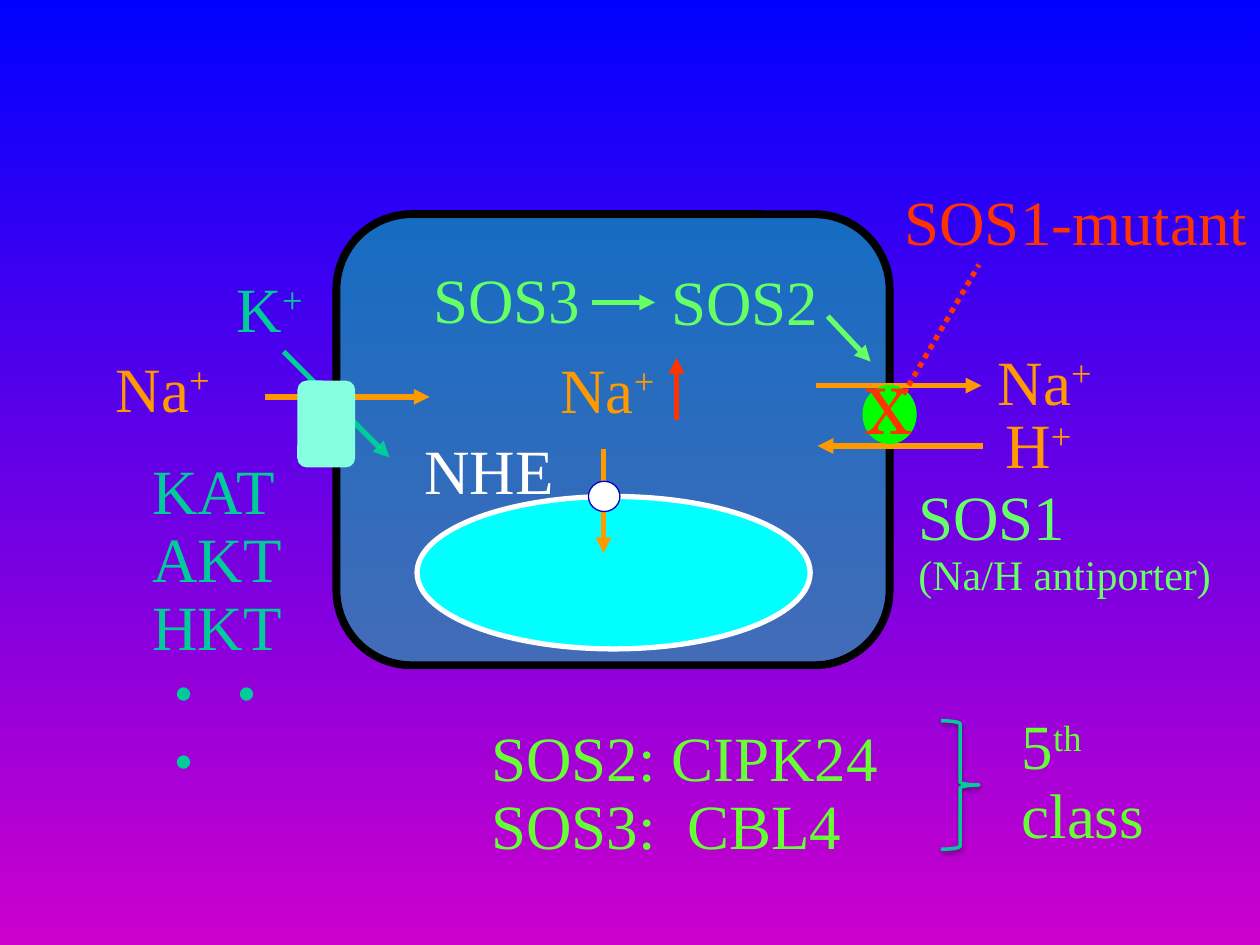
from dataclasses import dataclass
from typing import Optional

from lxml import etree
from pptx import Presentation
from pptx import util as u
from pptx.dml.color import RGBColor
from pptx.enum import dml, shapes, text
from pptx.oxml.ns import qn


@dataclass(frozen=True)
class Theme:
    sky: str = "0000FF"
    dusk: str = "CC00CC"
    teal: str = "00CC99"
    mint: str = "85FFE0"
    orange: str = "FF9900"
    green: str = "66FF66"
    lime: str = "66FF33"
    pump: str = "00FF00"
    red: str = "FF3300"
    cyan: str = "00FFFF"
    white: str = "FFFFFF"
    navy: str = "0000CC"
    black: str = "000000"
    serif: str = "Times New Roman"
    schola: str = "TeX Gyre Schola"
    large: int = 36
    small: int = 24
    stroke: float = 3


THEME = Theme()
SHAPE = shapes.MSO_SHAPE


@dataclass(frozen=True)
class Label:
    """Lines of text; what follows ^ in a line is superscript."""
    box: tuple
    lines: tuple
    color: str
    sizes: tuple = ()
    font: str = THEME.serif
    wrap: bool = False


@dataclass(frozen=True)
class Stroke:
    start: tuple
    end: tuple
    color: str
    dotted: bool = False


@dataclass(frozen=True)
class Body:
    kind: SHAPE
    box: tuple
    fill: Optional[str] = None
    line: Optional[str] = None
    width: float = 0.75
    alpha: int = 100
    shadow: bool = False


CELL = (
    Body(SHAPE.ROUNDED_RECTANGLE, (2.67, 1.7, 4.39, 3.58), THEME.teal, THEME.black, 4.5, alpha=53),
    Label((0.82, 2.79, 0.97, 0.64), ("Na^+",), THEME.orange),
    Stroke((2.1, 3.15), (3.41, 3.15), THEME.orange),
)
ANTIPORTER = (
    Stroke((6.48, 3.06), (7.79, 3.06), THEME.orange),
    Stroke((7.8, 3.54), (6.49, 3.54), THEME.orange),
    Label((7.82, 2.74, 0.97, 0.64), ("Na^+",), THEME.orange),
    Label((7.88, 3.24, 0.75, 0.64), ("H^+",), THEME.orange),
    Body(SHAPE.OVAL, (6.85, 3.06, 0.42, 0.46), THEME.pump, THEME.pump),
    Label((7.19, 3.81, 2.55, 1.01), ("SOS1", "(Na/H antiporter)"), THEME.green,
          (THEME.large, THEME.small)),
)
SIGNALLING = (
    Label((3.34, 2.09, 1.37, 0.64), ("SOS3",), THEME.green),
    Stroke((4.7, 2.4), (5.2, 2.4), THEME.green),
    Label((5.23, 2.1, 1.37, 0.64), ("SOS2",), THEME.green),
    Stroke((6.57, 2.51), (6.91, 2.87), THEME.green),
)
MUTANT = (
    Label((7.08, 1.47, 2.92, 0.64), ("SOS1-mutant",), THEME.red),
    Label((6.78, 2.97, 0.55, 0.64), ("X",), THEME.red, font=THEME.schola),
    Stroke((7.17, 3.13), (7.77, 2.1), THEME.red, dotted=True),
)
VACUOLE = (
    Body(SHAPE.OVAL, (3.31, 3.94, 3.12, 1.21), THEME.cyan, THEME.white, THEME.stroke),
    Stroke((4.79, 3.56), (4.79, 4.39), THEME.orange),
    Body(SHAPE.OVAL, (4.67, 3.82, 0.25, 0.24), THEME.white, THEME.navy),
    Label((3.27, 3.44, 1.23, 0.64), ("NHE",), THEME.white),
    Label((4.35, 2.8, 0.97, 0.64), ("Na^+",), THEME.orange),
    Stroke((5.37, 3.33), (5.37, 2.84), THEME.red),
)
CHANNELS = (
    Stroke((2.25, 2.79), (3.09, 3.63), THEME.teal),
    Label((1.11, 3.6, 1.24, 2.28), ("KAT", "AKT", "HKT", "・・・"), THEME.teal, wrap=True),
    Body(SHAPE.ROUNDED_RECTANGLE, (2.36, 3.02, 0.46, 0.69), THEME.mint),
    Label((1.78, 2.16, 0.75, 0.64), ("K^+",), THEME.teal),
)
KEY = (
    Label((3.8, 5.72, 3.43, 1.19), ("SOS2: CIPK24", "SOS3:  CBL4"), THEME.lime),
    Body(SHAPE.RIGHT_BRACE, (7.47, 5.72, 0.3, 1.02), line=THEME.teal, width=2, shadow=True),
    Label((8.01, 5.63, 1.61, 1.19), ("5^th", "class"), THEME.lime, wrap=True),
)


def inches(values: tuple) -> list:
    return [u.Inches(value) for value in values]


def rgb(color: str) -> RGBColor:
    return RGBColor.from_string(color)


def draw_label(page, label: Label) -> None:
    box = page.shapes.add_textbox(*inches(label.box))
    frame = box.text_frame
    frame.word_wrap = label.wrap
    frame.auto_size = text.MSO_AUTO_SIZE.SHAPE_TO_FIT_TEXT
    sizes = label.sizes or (THEME.large,) * len(label.lines)
    for index, (line, size) in enumerate(zip(label.lines, sizes)):
        para = frame.add_paragraph() if index else frame.paragraphs[0]
        para.line_spacing = 0.9
        para.font.name = label.font
        para.font.size = u.Pt(size)
        para.font.color.rgb = rgb(label.color)
        base, _, raised = line.partition("^")
        para.add_run().text = base
        if raised:
            span = para.add_run()
            span.text = raised
            span._r.get_or_add_rPr().set("baseline", "30000")


def draw_stroke(page, stroke: Stroke) -> None:
    """Draw a dotted line, or a solid one with an arrowhead at its end."""
    connector = page.shapes.add_connector(
        shapes.MSO_CONNECTOR.STRAIGHT, *inches(stroke.start + stroke.end))
    connector.line.color.rgb = rgb(stroke.color)
    connector.line.width = u.Pt(THEME.stroke)
    if stroke.dotted:
        connector.line.dash_style = dml.MSO_LINE.ROUND_DOT
    else:
        etree.SubElement(connector.line._get_or_add_ln(), qn("a:tailEnd"), type="triangle")
    etree.SubElement(connector._element.spPr, qn("a:effectLst"))


def add_shadow(shape) -> None:
    effects = shape._element.spPr.find(qn("a:effectLst"))
    shadow = etree.SubElement(effects, qn("a:outerShdw"), blurRad=str(u.Pt(3.1)),
                              dist=str(u.Pt(1.6)), dir="5400000", rotWithShape="0")
    color = etree.SubElement(shadow, qn("a:srgbClr"), val=THEME.black)
    etree.SubElement(color, qn("a:alpha"), val="38000")


def draw_body(page, body: Body) -> None:
    shape = page.shapes.add_shape(body.kind, *inches(body.box))
    shape.shadow.inherit = False
    if body.fill:
        shape.fill.solid()
        shape.fill.fore_color.rgb = rgb(body.fill)
        if body.alpha < 100:
            color = shape._element.spPr.find(qn("a:solidFill"))[0]
            etree.SubElement(color, qn("a:alpha"), val=str(body.alpha * 1000))
    else:
        shape.fill.background()
    if body.line:
        shape.line.color.rgb = rgb(body.line)
        shape.line.width = u.Pt(body.width)
    else:
        shape.line.fill.background()
    if body.shadow:
        add_shadow(shape)


def paint_background(page) -> None:
    fill = page.background.fill
    fill.gradient()
    fill.gradient_angle = 270
    for stop, color in zip(fill.gradient_stops, (THEME.sky, THEME.dusk)):
        stop.color.rgb = rgb(color)


def main() -> None:
    deck = Presentation()
    deck.slide_width, deck.slide_height = inches((10, 7.5))
    page = deck.slides.add_slide(deck.slide_layouts.get_by_name("Blank"))
    paint_background(page)
    painters = {Label: draw_label, Stroke: draw_stroke, Body: draw_body}
    for group in (CELL, ANTIPORTER, SIGNALLING, MUTANT, VACUOLE, CHANNELS, KEY):
        for item in group:
            painters[type(item)](page, item)
    deck.save("out.pptx")


if __name__ == "__main__":
    main()
